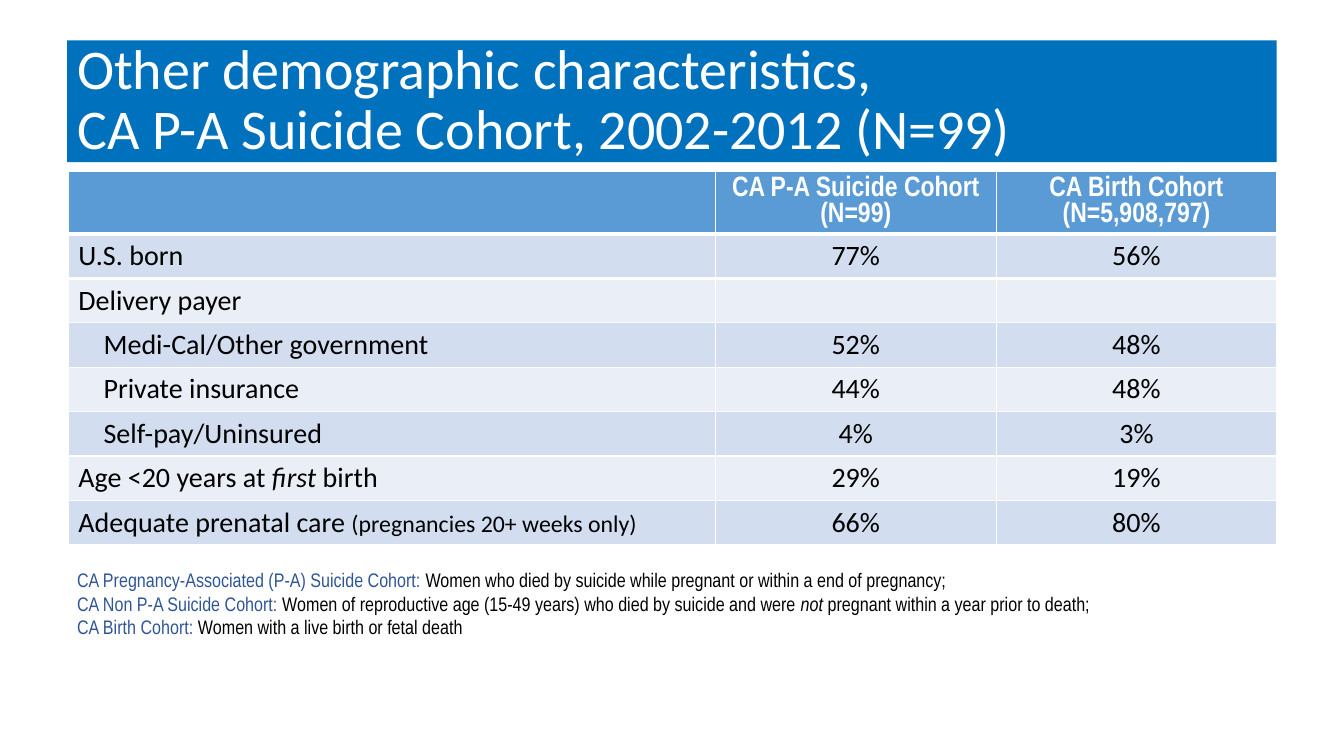
"""Build the slide on demographic characteristics of the suicide cohort."""
from lxml.etree import SubElement as Sub
from pptx import Presentation
from pptx.dml.color import RGBColor
from pptx.enum.text import MSO_ANCHOR as Anchor, MSO_AUTO_SIZE as Fit, PP_ALIGN as Align
from pptx.oxml.ns import qn
from pptx.oxml.xmlchemy import OxmlElement as Element
from pptx.util import Pt


def paint(part, color):
    part.solid()
    part.fore_color.rgb = RGBColor.from_string(color)


def write(par, text, color, **form):
    run = par.add_run()
    run.text = text
    paint(run.font.fill, color)
    for name, value in form.items():
        setattr(run.font, name, value)


WHITE, BLACK, NAVY = "FFFFFF", "000000", "2F5597"
TITLE = {"name": "Calibri", "size": Pt(40)}
BODY = {"name": "Calibri", "size": Pt(20), "bold": False}
HEAD = {"name": "Arial Narrow", "size": Pt(20), "bold": True}
NOTE = {"name": "Arial Narrow", "size": Pt(14)}
SMALL = {"size": Pt(17)}
SLOPE = {"italic": True}

deck = Presentation()
deck.slide_width, deck.slide_height = Pt(960), Pt(540)
slide = deck.slides.add_slide(deck.slide_layouts[5])

title = slide.shapes.title
place = {"left": Pt(48), "top": Pt(28.8), "width": Pt(864), "height": Pt(87)}
for name, value in place.items():
    setattr(title, name, value)
paint(title.fill, "0071BC")
frame = title.text_frame
frame.auto_size = Fit.NONE
frame.word_wrap = True
frame.vertical_anchor = Anchor.MIDDLE
par = frame.paragraphs[0]
par.alignment = Align.LEFT
par.line_spacing = 0.9
write(par, "Other demographic characteristics, ", WHITE, **TITLE)
par.add_line_break()
write(par, "CA P-A Suicide Cohort, 2002-2012 (N=99)", WHITE, **TITLE)

heads = [[], ["CA P-A Suicide Cohort", "(N=99)"], ["CA Birth Cohort", "(N=5,908,797)"]]
rows = [
    (0, [("U.S. born", {})], "77%", "56%"),
    (0, [("Delivery payer", {})], "", ""),
    (18, [("Medi-Cal/Other government", {})], "52%", "48%"),
    (18, [("Private insurance", {})], "44%", "48%"),
    (18, [("Self-pay/Uninsured", {})], "4%", "3%"),
    (0, [("Age <20 years at ", {}), ("first", SLOPE), (" birth", {})], "29%", "19%"),
    (0, [("Adequate prenatal care ", {}), ("(pregnancies 20+ weeks only)", SMALL)],
     "66%", "80%"),
]
table = slide.shapes.add_table(len(rows) + 1, 3, Pt(48.8), Pt(122.2), Pt(863), Pt(266)).table
for col, width in zip(table.columns, (462, 201, 200)):
    col.width = Pt(width)
for row in table.rows:
    row.height = Pt(31.6)
table.rows[0].height = Pt(44.8)

for col, lines in enumerate(heads):
    cell = table.cell(0, col)
    paint(cell.fill, "5B9BD5")
    for num, line in enumerate(lines):
        par = cell.text_frame.add_paragraph() if num else cell.text_frame.paragraphs[0]
        par.alignment = Align.CENTER
        write(par, line, WHITE, **HEAD)

for num, (indent, label, *shares) in enumerate(rows, 1):
    for col, runs in enumerate([label] + [[(share, {})] for share in shares]):
        cell = table.cell(num, col)
        paint(cell.fill, "D2DEEF" if num % 2 else "EAEFF7")
        par = cell.text_frame.paragraphs[0]
        if col:
            par.alignment = Align.CENTER
        elif indent:
            props = par._p.get_or_add_pPr()
            props.set("marL", str(Pt(indent)))
            props.set("indent", "0")
        for text, form in runs:
            if text:
                write(par, text, BLACK, **{**BODY, **form})

for num, edge in enumerate(("a:lnB", "a:lnT")):
    for cell in table.rows[num].cells:
        line = Element(edge)
        line.set("w", str(Pt(3)))
        Sub(Sub(line, qn("a:solidFill")), qn("a:srgbClr")).set("val", WHITE)
        cell._tc.get_or_add_tcPr().insert(0, line)

notes = [
    ("CA Pregnancy-Associated (P-A) Suicide Cohort: ",
     [("Women who died by suicide while pregnant or within a end of pregnancy;", {})]),
    ("CA Non P-A Suicide Cohort: ",
     [("Women of reproductive age (15-49 years) who died by suicide and were ", {}),
      ("not ", SLOPE), ("pregnant within a year prior to death;", {})]),
    ("CA Birth Cohort: ", [("Women with a live birth or fetal death", {})]),
]
frame = slide.shapes.add_textbox(Pt(48), Pt(402.2), Pt(864), Pt(58.3)).text_frame
frame.word_wrap = True
for num, (term, runs) in enumerate(notes):
    par = frame.add_paragraph() if num else frame.paragraphs[0]
    write(par, term, NAVY, **NOTE)
    for text, form in runs:
        write(par, text, BLACK, **NOTE, **form)

deck.save("out.pptx")
